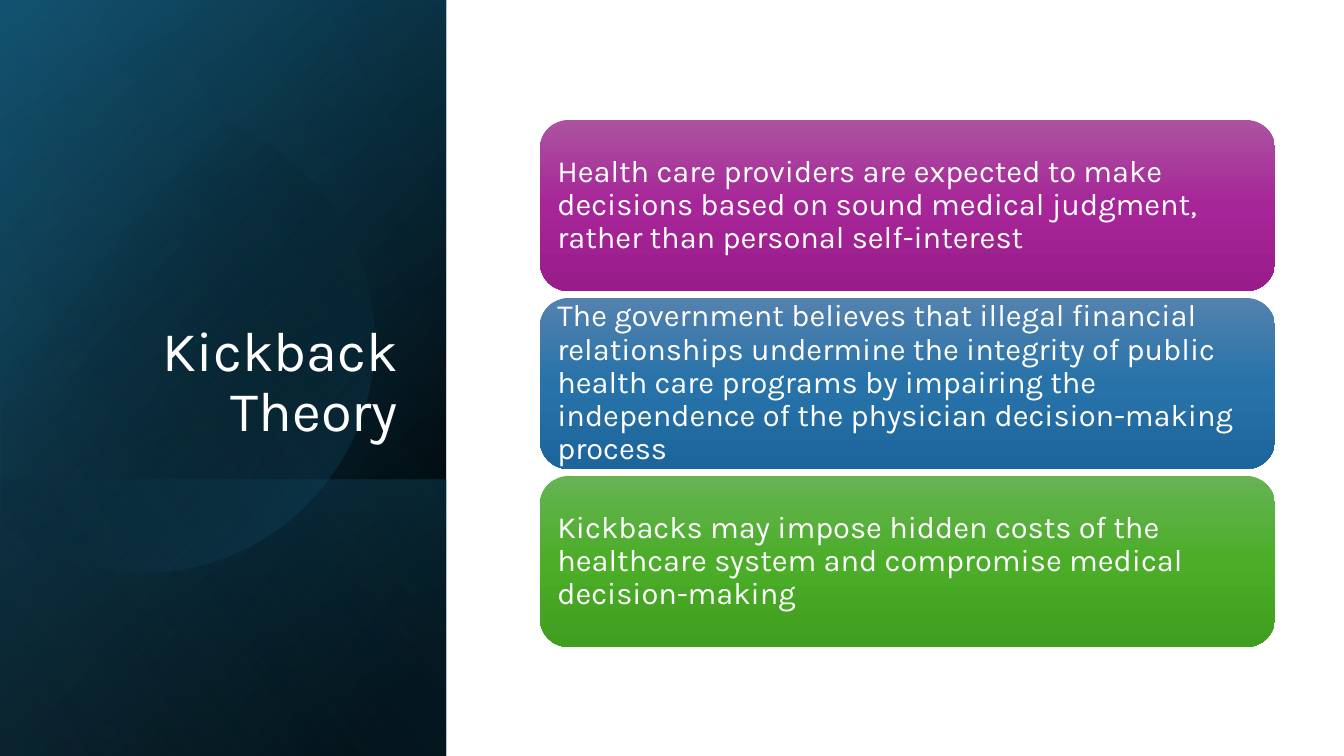
from math import cos, radians, sin

from pptx import Presentation
from pptx.dml.color import RGBColor
from pptx.enum.shapes import MSO_SHAPE
from pptx.enum.text import MSO_ANCHOR, MSO_AUTO_SIZE, PP_ALIGN
from pptx.oxml import parse_xml
from pptx.oxml.ns import nsdecls
from pptx.util import Pt

RECTANGLE, ROUNDED = MSO_SHAPE.RECTANGLE, MSO_SHAPE.ROUNDED_RECTANGLE
MIDDLE, BOTTOM = MSO_ANCHOR.MIDDLE, MSO_ANCHOR.BOTTOM
LEFT, RIGHT = PP_ALIGN.LEFT, PP_ALIGN.RIGHT
NO_FIT = MSO_AUTO_SIZE.NONE

SLIDE_WIDTH, SLIDE_HEIGHT = 1344, 756
EMU_PER_PX = 12192000 / SLIDE_WIDTH
FONT = "Karla"
WHITE = "FFFFFF"

# Gradient stops: position %, colour, opacity %
BASE = [(8, "000000", 100), (100, "104862", 100)]
TEAL_GLOW = [(0, "000000", 0), (99, "156082", 46)]
FOOT_SHADE = [(2, "156082", 29), (100, "000000", 30)]
DISC_GLOW = [(29, "000000", 0), (100, "156082", 43)]
SKY_GLOW = [(0, "000000", 0), (99, "46B1E1", 11)]

CARDS = [
    ("Health care providers are expected to make decisions based on sound "
     "medical judgment, rather than personal self-interest",
     ["AC53A0", "A62598", "991C8B"]),
    ("The government believes that illegal financial relationships undermine "
     "the integrity of public health care programs by impairing the "
     "independence of the physician decision-making process",
     ["5382AF", "2772A9", "1D669C"]),
    ("Kickbacks may impose hidden costs of the healthcare system and "
     "compromise medical decision-making",
     ["66B354", "4BAD28", "409F1E"]),
]


def px(length):
    return round(length * EMU_PER_PX)


def colour(value):
    return RGBColor.from_string(value)


def fill_gradient(shape, stops, angle):
    """Fill with a linear gradient, angle in degrees clockwise, no outline."""
    shape.shadow.inherit = False
    shape.line.fill.background()
    shape.fill.background()
    stop_xml = "".join(
        f'<a:gs pos="{position * 1000}"><a:srgbClr val="{value}">'
        f'<a:alpha val="{opacity * 1000}"/></a:srgbClr></a:gs>'
        for position, value, opacity in stops)
    gradient = parse_xml(
        f'<a:gradFill {nsdecls("a")} rotWithShape="1"><a:gsLst>{stop_xml}</a:gsLst>'
        f'<a:lin ang="{angle * 60000}" scaled="0"/></a:gradFill>')
    properties = shape._element.spPr
    properties.replace(properties.find(
        "{http://schemas.openxmlformats.org/drawingml/2006/main}noFill"), gradient)


def write_text(shape, text, size, align, anchor):
    frame = shape.text_frame
    frame.text = text
    frame.word_wrap = True
    frame.auto_size = NO_FIT
    frame.vertical_anchor = anchor
    para = frame.paragraphs[0]
    para.alignment = align
    para.line_spacing = 0.9
    para.font.name = FONT
    para.font.size = Pt(size)
    para.font.color.rgb = colour(WHITE)
    return frame


def add_turned_panel(page, box, stops, angle):
    """Mirrored rectangle turned by 90 degrees so that it covers the box."""
    left, top, width, height = box
    shift = (width - height) / 2
    panel = page.shapes.add_shape(
        RECTANGLE, px(left + shift), px(top - shift), px(height), px(width))
    panel.rotation = 90
    panel._element.spPr.xfrm.set("flipH", "1")
    fill_gradient(panel, stops, angle)


def add_disc(page, box):
    """Circle cut off by the left edge of the box."""
    left, top = box[:2]
    centre_x, centre_y, radius = left + 142, top + 340, 232
    arc = [(px(centre_x + radius * cos(radians(angle))),
            px(centre_y + radius * sin(radians(angle))))
           for angle in range(-127, 128, 2)]
    builder = page.shapes.build_freeform(*arc[0], scale=1.0)
    builder.add_line_segments(arc[1:], close=True)
    fill_gradient(builder.convert_to_shape(), DISC_GLOW, 40)


def add_title_panel(page, box):
    left, top, width, height = box
    foot_height = 276
    foot = (left, top + height - foot_height, width, foot_height)

    # Layered background
    add_turned_panel(page, box, BASE, 50)
    add_turned_panel(page, box, TEAL_GLOW, 30)
    add_turned_panel(page, foot, FOOT_SHADE, 130)
    add_disc(page, box)
    add_turned_panel(page, box, SKY_GLOW, 120)

    # Title, brought in front of the background
    title = page.shapes.title
    title.left, title.top = px(left + 64), px(top + 185)
    title.width, title.height = px(344), px(264)
    write_text(title, "Kickback Theory", 40, RIGHT, BOTTOM)
    page.shapes._spTree.append(title._element)


def add_cards(page, box):
    left, top, width, height = box
    gap = 7
    card_height = (height - gap * (len(CARDS) - 1)) / len(CARDS)
    for index, (text, shades) in enumerate(CARDS):
        card = page.shapes.add_shape(
            ROUNDED, px(left), px(top + index * (card_height + gap)),
            px(width), px(card_height))
        fill_gradient(card, [(position, shade, 100) for position, shade
                             in zip((0, 50, 100), shades)], 90)
        frame = write_text(card, text, 22, LEFT, MIDDLE)
        frame.margin_left = frame.margin_right = px(9)
        frame.margin_top = frame.margin_bottom = px(9)


def main():
    deck = Presentation()
    deck.slide_width, deck.slide_height = px(SLIDE_WIDTH), px(SLIDE_HEIGHT)
    page = deck.slides.add_slide(deck.slide_layouts[5])
    add_title_panel(page, (0, 0, 446, SLIDE_HEIGHT))
    add_cards(page, (540, 120, 735, 527))
    deck.save("out.pptx")


if __name__ == "__main__":
    main()
